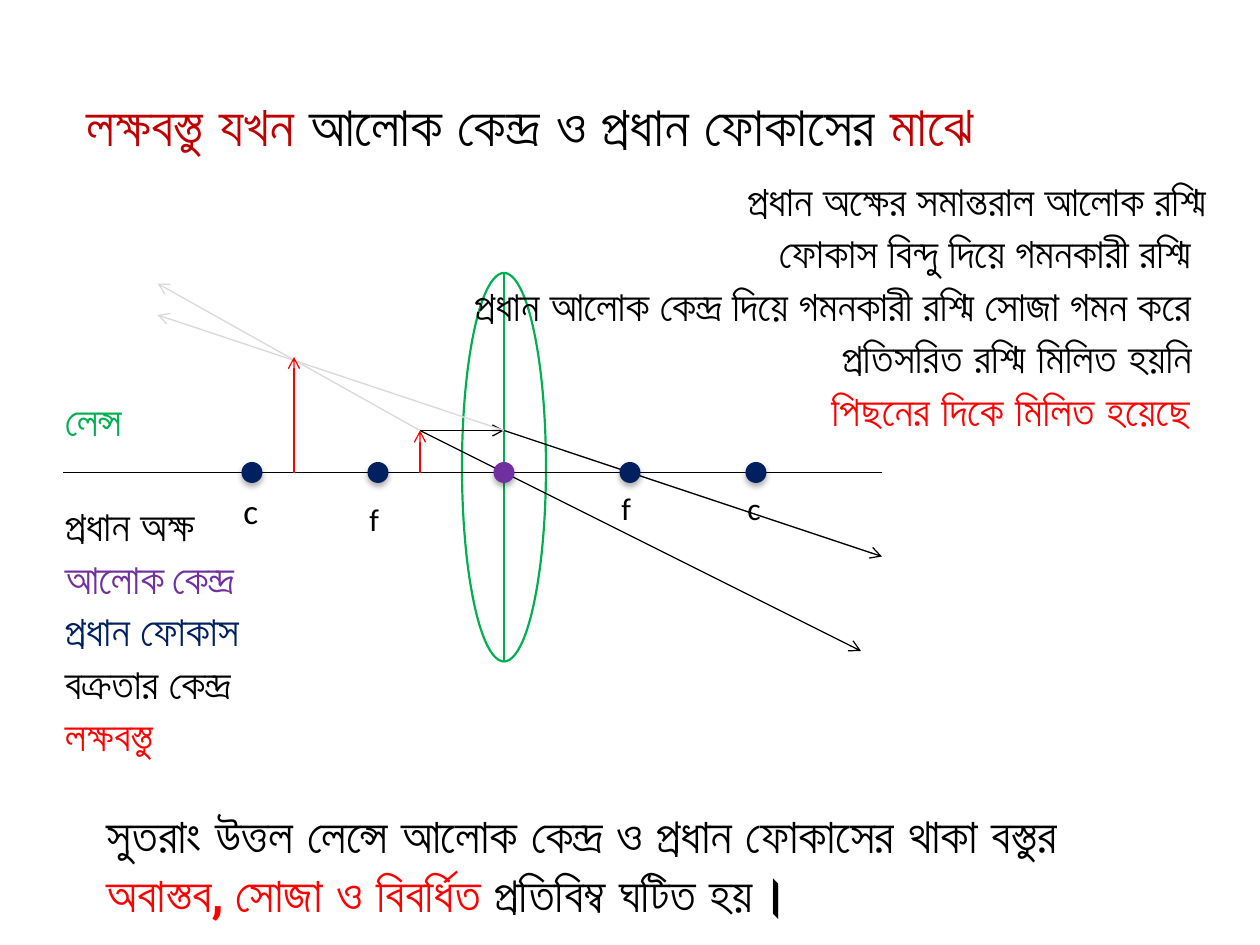
import pptx
import pptx.util
import pptx.dml.color
import pptx.enum.shapes
import pptx.enum.text
import pptx.oxml
import pptx.oxml.ns
from lxml import etree

PX = 7620  # EMU per px, 120 px to the inch
THEME = {
    "black": "000000", "red": "FF0000", "dark_red": "C00000", "green": "00B050",
    "navy": "002060", "purple": "7030A0", "grey": "D9D9D9",
    "body_font": "Roboto", "mark_font": "Calibri",
    "title": 32, "summary": 28, "label": 24, "mark": 20, "small": 18,
    "line": 0.75, "lens_line": 1.25,
}
SHAPE = pptx.enum.shapes.MSO_SHAPE
RGB = pptx.dml.color.RGBColor.from_string
qn = pptx.oxml.ns.qn


def write(s, runs, size, font=THEME["body_font"], bold=False, wrap=True):
    """Fill a shape with one paragraph of (text, colour[, size]) runs."""
    tf = s.text_frame
    tf.word_wrap = wrap
    tf.auto_size = pptx.enum.text.MSO_AUTO_SIZE.SHAPE_TO_FIT_TEXT
    tf.vertical_anchor = pptx.enum.text.MSO_ANCHOR.TOP
    p = tf.paragraphs[0]
    p.alignment = pptx.enum.text.PP_ALIGN.LEFT
    for text, colour, *own_size in runs:
        r = p.add_run()
        r.text = text
        r.font.name = font
        r.font.size = pptx.util.Pt(own_size[0] if own_size else size)
        r.font.bold = bold
        r.font.color.rgb = RGB(THEME[colour])


def line(shapes, start, end, colour, arrow=False):
    """Draw a thin straight line, with an open arrowhead at its end if asked."""
    c = shapes.add_connector(pptx.enum.shapes.MSO_CONNECTOR.STRAIGHT,
                             *[v * PX for v in (*start, *end)])
    c.line.color.rgb = RGB(THEME[colour])
    c.line.width = pptx.util.Pt(THEME["line"])
    if arrow:
        etree.SubElement(c.line._get_or_add_ln(), qn("a:tailEnd"), type="arrow")
    etree.SubElement(c._element.spPr, qn("a:effectLst"))


prs = pptx.Presentation()
prs.slide_width, prs.slide_height = 1200 * PX, 900 * PX
slide = prs.slides.add_slide(prs.slide_layouts[5])

# Title
title = slide.shapes.title
title.left, title.top, title.width, title.height = [v * PX for v in (70, 80, 1100, 77)]
write(title, [("লক্ষবস্তু যখন ", "dark_red"),
              ("আলোক কেন্দ্র ও প্রধান ফোকাসের ", "black"),
              ("মাঝে", "dark_red")], THEME["title"], bold=True)

# Lens
AXIS_Y, LENS_X, FOCAL, RAY_Y = 450, 480, 120, 410
lens = slide.shapes.add_group_shape()
s = lens.shapes.add_shape(SHAPE.OVAL, *[v * PX for v in (LENS_X - 40, 260, 80, 370)])
s.shadow.inherit = False
s.fill.background()
s.line.color.rgb = RGB(THEME["green"])
s.line.width = pptx.util.Pt(THEME["lens_line"])
line(lens.shapes, (LENS_X, 260), (LENS_X, 630), "green")

# Principal axis, rays, object, traced-back rays and image
object_tip, lens_hit = (400, RAY_Y), (LENS_X, RAY_Y)
line(slide.shapes, (60, AXIS_Y), (840, AXIS_Y), "black")
for start, end, colour in [
    (object_tip, (820, 620), "black"),
    (object_tip, lens_hit, "black"),
    (lens_hit, (840, 530), "black"),
    ((400, AXIS_Y), object_tip, "red"),
    (object_tip, (150, 270), "grey"),
    (lens_hit, (150, 300), "grey"),
    ((280, AXIS_Y), (280, 340), "red"),
]:
    line(slide.shapes, start, end, colour, arrow=True)

# Points on the axis: c, f, optical centre, f, c
for step in range(-2, 3):
    x = LENS_X + step * FOCAL
    s = slide.shapes.add_shape(SHAPE.OVAL, *[v * PX for v in (x - 10, AXIS_Y - 10, 20, 20)])
    s.fill.solid()
    s.fill.fore_color.rgb = RGB(THEME["navy" if step else "purple"])
    s.line.fill.background()
    s.shadow.inherit = False
    effects = s._element.spPr.find(qn("a:effectLst"))
    shadow = etree.SubElement(effects, qn("a:outerShdw"), blurRad="44450",
                              dist="27940", dir="5400000", rotWithShape="0")
    black = etree.SubElement(shadow, qn("a:srgbClr"), val=THEME["black"])
    etree.SubElement(black, qn("a:alpha"), val="32000")

# Letters under the points
for letter, x, y, w, size in [("c", 220, 460, 40, "mark"), ("f", 340, 470, 30, "small"),
                              ("f", 580, 460, 30, "small"), ("c", 700, 460, 30, "small")]:
    s = slide.shapes.add_textbox(*[v * PX for v in (x, y, w, 50)])
    write(s, [(letter, "black")], THEME[size], THEME["mark_font"])

# Names of the parts (left) and notes on the rays (right)
for x, y, w, wrap, bold, runs in [
    (50, 370, 120, True, False, [("লেন্স", "green")]),
    (50, 470, 151, False, False, [("প্রধান অক্ষ", "black")]),
    (50, 520, 188, False, False, [("আলোক", "purple"), (" ", "purple", THEME["small"]),
                                  ("কেন্দ্র", "purple")]),
    (50, 570, 196, False, False, [("প্রধান ফোকাস", "navy")]),
    (50, 620, 200, True, False, [("বক্রতার কেন্দ্র", "black")]),
    (50, 670, 112, False, False, [("লক্ষবস্তু", "red")]),
    (700, 160, 500, True, False, [("প্রধান অক্ষের সমান্তরাল আলোক রশ্মি", "black")]),
    (730, 210, 443, False, False, [("ফোকাস বিন্দু দিয়ে গমনকারী রশ্মি", "black")]),
    (440, 260, 732, False, False,
     [("প্রধান আলোক কেন্দ্র দিয়ে গমনকারী রশ্মি সোজা গমন করে", "black")]),
    (790, 310, 380, True, True, [("প্রতিসরিত রশ্মি মিলিত হয়নি", "black")]),
    (780, 360, 377, False, True, [("পিছনের দিকে মিলিত হয়েছে", "red")]),
]:
    s = slide.shapes.add_textbox(*[v * PX for v in (x, y, w, 60)])
    write(s, runs, THEME["label"], bold=bold, wrap=wrap)

# Conclusion
s = slide.shapes.add_textbox(*[v * PX for v in (90, 760, 1050, 128)])
write(s, [("সুতরাং উত্তল লেন্সে আলোক কেন্দ্র ও প্রধান ফোকাসের থাকা বস্তুর ", "black"),
          ("অবাস্তব, সোজা ও বিবর্ধিত ", "red"),
          ("প্রতিবিম্ব ঘটিত হয়।", "black")], THEME["summary"], bold=True)

prs.save("out.pptx")
